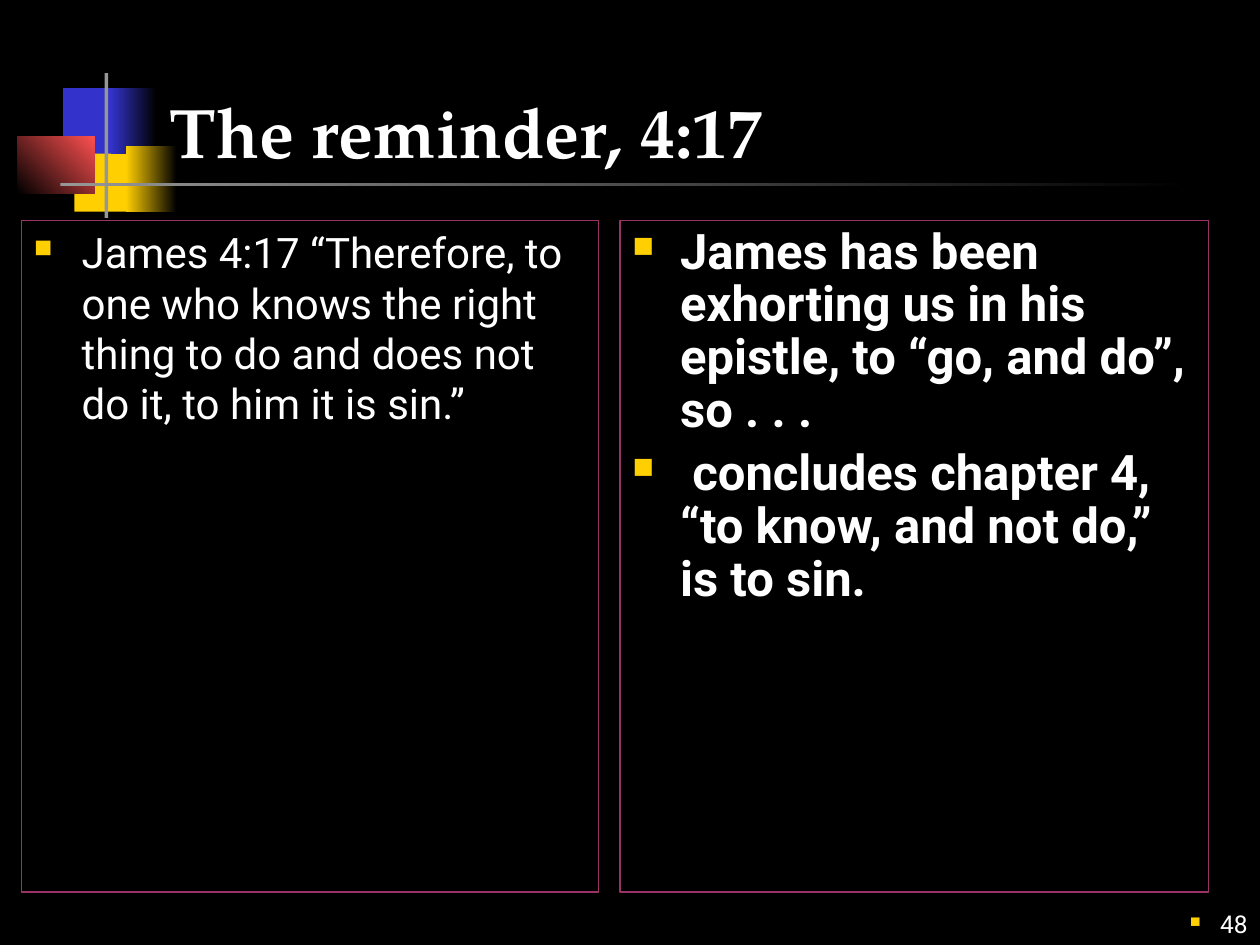
import pptx
import pptx.dml.color
import pptx.enum.shapes
import pptx.enum.text
import pptx.oxml.ns
import pptx.util
from lxml import etree

Inches = pptx.util.Inches
Pt = pptx.util.Pt
ANCHOR = pptx.enum.text.MSO_ANCHOR
ALIGN = pptx.enum.text.PP_ALIGN

# Content
TITLE = "The reminder, 4:17"
PAGE_NUMBER = "48"
VERSE = ["James 4:17 “Therefore, to one who knows the right thing to do and does not do it, to him it is sin.”"]
LESSONS = [
    "James has been exhorting us in his epistle, to “go, and do”, so . . .",
    " concludes chapter 4, “to know, and not do,” is to sin.",
]

BLACK, WHITE, GRAY = "000000", "FFFFFF", "969696"
YELLOW, BLUE, RED, PLUM = "FFCF01", "3333CC", "FF5050", "993366"

# Ornament: left, top, width, height, colours (two make a gradient), angle
ORNAMENT = [
    (0.59, 1.16, 0.46, 0.52, [YELLOW], 0),
    (0.5, 0.7, 0.48, 0.52, [BLUE], 0),
    (0.88, 0.7, 0.36, 0.52, [BLUE, BLACK], 0),
    (1, 1.16, 0.4, 0.52, [YELLOW, BLACK], 0),
    (0.14, 1.08, 0.61, 0.46, [BLACK, RED], 45),
    (0.83, 0.58, 0.03, 1.15, [GRAY], 0),
    (0.48, 1.45, 9, 0.03, [GRAY, BLACK], 0),
]
PANEL_TOP, PANEL_HEIGHT = 1.75, 5.33


def color(value):
    return pptx.dml.color.RGBColor.from_string(value)


def add_block(page, left, top, width, height, colors, angle):
    block = page.shapes.add_shape(
        pptx.enum.shapes.MSO_SHAPE.RECTANGLE,
        Inches(left), Inches(top), Inches(width), Inches(height))
    block.shadow.inherit = False
    block.line.fill.background()
    if len(colors) == 1:
        block.fill.solid()
        block.fill.fore_color.rgb = color(colors[0])
    else:
        block.fill.gradient()
        block.fill.gradient_angle = angle
        for stop, value in zip(block.fill.gradient_stops, colors):
            stop.color.rgb = color(value)


def add_bullet(para, indent):
    properties = para._p.get_or_add_pPr()
    properties.set("marL", str(Inches(indent)))
    properties.set("indent", str(-Inches(indent)))
    qn = pptx.oxml.ns.qn
    bullet_color = etree.SubElement(properties, qn("a:buClr"))
    etree.SubElement(bullet_color, qn("a:srgbClr"), val=YELLOW)
    etree.SubElement(properties, qn("a:buSzPct"), val="60000")
    etree.SubElement(properties, qn("a:buChar"), char="■")


def add_text(page, texts, left, top, width, height, size, font="Roboto", bold=False,
             align=ALIGN.LEFT, anchor=ANCHOR.TOP, spacing=1.0, before=0,
             indent=None, outline=None):
    box = page.shapes.add_textbox(Inches(left), Inches(top), Inches(width), Inches(height))
    if outline:
        box.line.color.rgb = color(outline)
        box.line.width = Pt(0.75)
    frame = box.text_frame
    frame.word_wrap = True
    frame.vertical_anchor = anchor
    for index, text in enumerate(texts):
        para = frame.add_paragraph() if index else frame.paragraphs[0]
        para.alignment = align
        para.line_spacing = spacing
        para.space_before = Pt(before)
        if indent:
            add_bullet(para, indent)
        span = para.add_run()
        span.text = text
        span.font.name = font
        span.font.size = Pt(size)
        span.font.bold = bold
        span.font.color.rgb = color(WHITE)


def main():
    deck = pptx.Presentation()
    deck.slide_width, deck.slide_height = Inches(10), Inches(7.5)
    page = deck.slides.add_slide(deck.slide_layouts[6])
    page.background.fill.solid()
    page.background.fill.fore_color.rgb = color(BLACK)

    for block in ORNAMENT:
        add_block(page, *block)

    # Page number and title
    add_text(page, [PAGE_NUMBER], 8.92, 7, 1.08, 0.5, size=14,
             align=ALIGN.RIGHT, anchor=ANCHOR.BOTTOM, indent=0.24)
    add_text(page, [TITLE], 1.25, 0.17, 8.52, 1.25, size=40,
             font="TeX Gyre Pagella", bold=True, anchor=ANCHOR.BOTTOM)

    # Two outlined panels
    add_text(page, LESSONS, 4.92, PANEL_TOP, 4.67, PANEL_HEIGHT, size=28, bold=True,
             spacing=0.9, before=5.6, indent=0.38, outline=PLUM)
    add_text(page, VERSE, 0.17, PANEL_TOP, 4.58, PANEL_HEIGHT, size=24,
             before=4.8, indent=0.38, outline=PLUM)

    deck.save("out.pptx")


if __name__ == "__main__":
    main()
